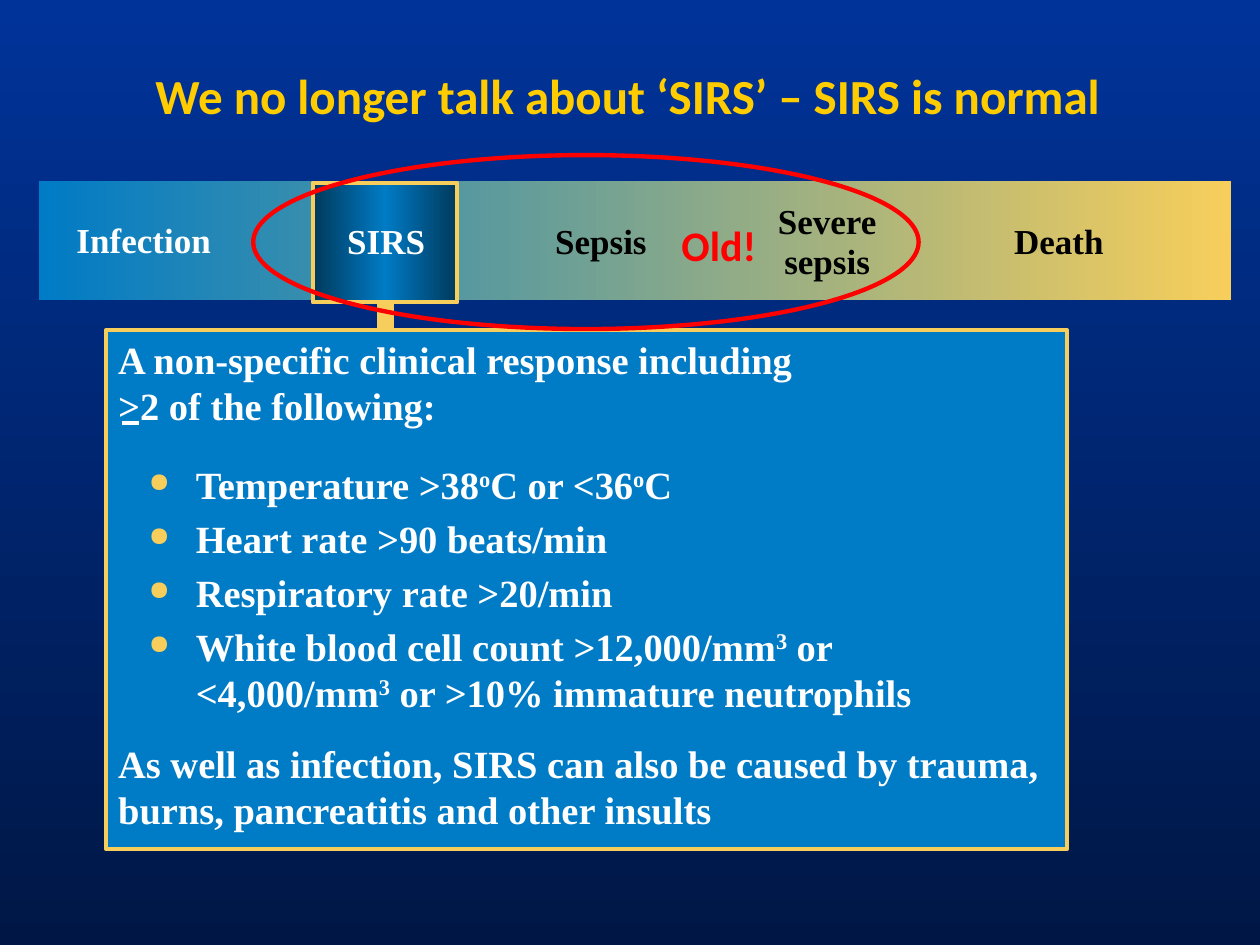
"""Build a slide placing SIRS on the path from infection to death."""
from copy import deepcopy

from lxml.etree import SubElement
from pptx import Presentation
from pptx.dml.color import RGBColor
from pptx.enum.shapes import MSO_CONNECTOR, MSO_SHAPE
from pptx.enum.text import MSO_ANCHOR, PP_ALIGN
from pptx.oxml.ns import qn
from pptx.util import Pt

NAVY = RGBColor(0x00, 0x33, 0x99)
MIDNIGHT = RGBColor(0x00, 0x17, 0x46)
BLUE = RGBColor(0x00, 0x7B, 0xC5)
DEEP_BLUE = RGBColor(0x00, 0x39, 0x5B)
SAND = RGBColor(0xF7, 0xCE, 0x5B)
GOLD = RGBColor(0xFF, 0xCC, 0x00)
RED = RGBColor(0xFF, 0x00, 0x00)
WHITE = RGBColor(0xFF, 0xFF, 0xFF)
BLACK = RGBColor(0x00, 0x00, 0x00)
SERIF = "Times New Roman"


def add_block(kind, left, top, width, height, fill=(), angle=0, line=None, weight=2.25):
    block = page.shapes.add_shape(kind, Pt(left), Pt(top), Pt(width), Pt(height))
    block.shadow.inherit = False
    if len(fill) == 2:
        block.fill.gradient()
        block.fill.gradient_angle = angle
        for stop, color in zip(block.fill.gradient_stops, fill):
            stop.color.rgb = color
    elif fill:
        block.fill.solid()
        block.fill.fore_color.rgb = fill[0]
    else:
        block.fill.background()
    if line is None:
        block.line.fill.background()
    else:
        block.line.color.rgb = line
        block.line.width = Pt(weight)
    return block


def style(para, size, color, name=SERIF):
    para.font.size = Pt(size)
    para.font.bold = True
    para.font.name = name
    para.font.color.rgb = color


deck = Presentation()
deck.slide_width, deck.slide_height = Pt(720), Pt(540)
page = deck.slides.add_slide(deck.slide_layouts[5])

backdrop = page.background.fill
backdrop.gradient()
backdrop.gradient_angle = 270
for stop, color in zip(backdrop.gradient_stops, (NAVY, MIDNIGHT)):
    stop.color.rgb = color

title = page.shapes.title
title.left, title.top, title.width, title.height = Pt(22.3), Pt(30.2), Pt(672.5), Pt(48.2)
title.text_frame.text = "We no longer talk about ‘SIRS’ – SIRS is normal"
title.text_frame.vertical_anchor = MSO_ANCHOR.MIDDLE
title.text_frame.paragraphs[0].alignment = PP_ALIGN.CENTER
style(title.text_frame.paragraphs[0], 28, GOLD, "Calibri")

panel = add_block(MSO_SHAPE.RECTANGLE, 60.5, 188.6, 549.4, 296.6, [BLUE], line=SAND)
frame = panel.text_frame
frame.word_wrap = True
frame.vertical_anchor = MSO_ANCHOR.TOP
frame.text = (
    "A non-specific clinical response including\v>2 of the following:\n"
    "As well as infection, SIRS can also be caused by trauma, "
    "burns, pancreatitis and other insults"
)
for para in frame.paragraphs:
    para.alignment = PP_ALIGN.LEFT
    style(para, 22, WHITE)
frame.paragraphs[1].space_before = Pt(178)

underline = page.shapes.add_connector(
    MSO_CONNECTOR.STRAIGHT, Pt(69.8), Pt(241.9), Pt(79.2), Pt(241.9))
underline.line.color.rgb = WHITE
underline.line.width = Pt(2.25)
SubElement(underline.element.spPr, qn("a:effectLst"))

add_block(MSO_SHAPE.RECTANGLE, 22.3, 103.7, 681.1, 67.7, [BLUE, SAND])
sirs_box = add_block(
    MSO_SHAPE.RECTANGLE, 178.6, 104.4, 82.8, 68.4, [DEEP_BLUE, BLUE], line=SAND)
stop_list = sirs_box.element.spPr.find(".//" + qn("a:gsLst"))
last_stop = deepcopy(stop_list[0])
last_stop.set("pos", "100000")
stop_list[1].set("pos", "50000")
stop_list.append(last_stop)

LABELS = [
    ("Infection", 82.1, WHITE, 0.85),
    ("SIRS", 220.7, WHITE, 0.95),
    ("Sepsis", 343.4, BLACK, 0.95),
    ("Severe\vsepsis", 472.7, BLACK, 0.95),
    ("Death", 605.1, BLACK, 0.95),
]
for text, center, color, spacing in LABELS:
    box = page.shapes.add_textbox(Pt(center - 45), Pt(114.6), Pt(90), Pt(48))
    frame = box.text_frame
    frame.margin_left = frame.margin_right = frame.margin_top = frame.margin_bottom = 0
    frame.word_wrap = True
    frame.vertical_anchor = MSO_ANCHOR.MIDDLE
    frame.text = text
    para = frame.paragraphs[0]
    para.alignment = PP_ALIGN.CENTER
    para.line_spacing = spacing
    style(para, 20, color)

CRITERIA = [
    "Temperature >38^o^C or <36^o^C",
    "Heart rate >90 beats/min",
    "Respiratory rate >20/min",
    "White blood cell count >12,000/mm^3^ or <4,000/mm^3^ or >10% immature neutrophils",
]
criteria_box = page.shapes.add_textbox(Pt(77.8), Pt(259.9), Pt(517.7), Pt(154.8))
frame = criteria_box.text_frame
frame.word_wrap = True
for index, criterion in enumerate(CRITERIA):
    para = frame.add_paragraph() if index else frame.paragraphs[0]
    para.space_before = Pt(4.4)
    style(para, 22, WHITE)
    for part, text in enumerate(criterion.split("^")):
        span = para.add_run()
        span.text = text
        if part % 2:
            span.font._element.set("baseline", "30000")
    properties = para._p.get_or_add_pPr()
    properties.set("marL", str(Pt(27)))
    properties.set("indent", str(-Pt(27)))
    bullet_color = properties.makeelement(qn("a:buClr"), {})
    SubElement(bullet_color, qn("a:srgbClr"), val=str(SAND))
    bullet_size = properties.makeelement(qn("a:buSzPct"), {"val": "70000"})
    bullet = properties.makeelement(qn("a:buChar"), {"char": "●"})
    defaults = properties.find(qn("a:defRPr"))
    for item in (bullet_color, bullet_size, bullet):
        defaults.addprevious(item)

add_block(MSO_SHAPE.RECTANGLE, 216, 172.8, 8.6, 15.8, [SAND], line=SAND, weight=1)
add_block(MSO_SHAPE.OVAL, 144.7, 88.6, 380.2, 99.4, line=RED, weight=2.5)

old_box = page.shapes.add_textbox(Pt(382.3), Pt(121.7), Pt(141.8), Pt(36))
old_box.text_frame.word_wrap = True
old_box.text_frame.text = "Old!"
style(old_box.text_frame.paragraphs[0], 24, RED, "Calibri")

deck.save("out.pptx")
